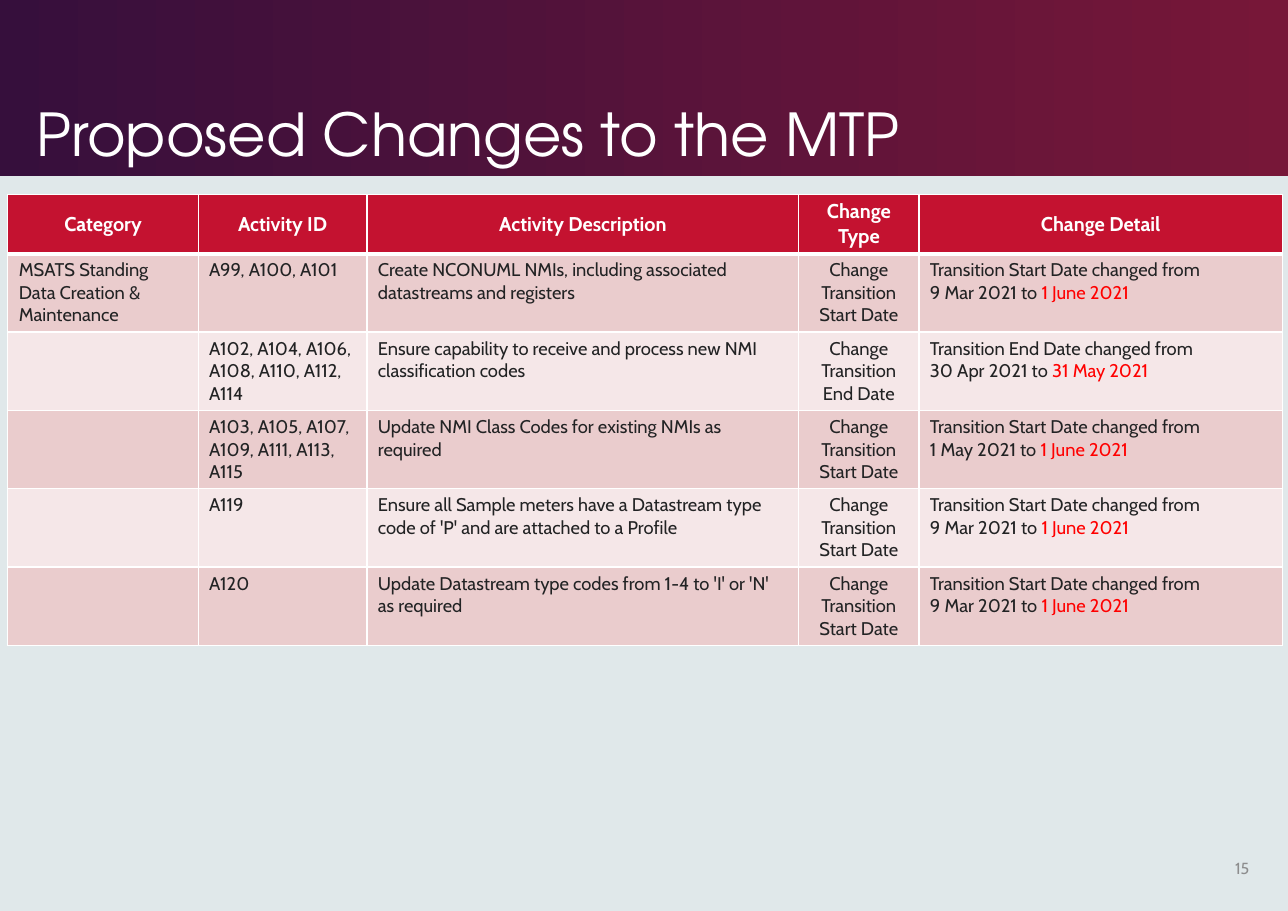
from lxml.etree import SubElement
from pptx import Presentation
from pptx.dml.color import RGBColor
from pptx.enum.shapes import MSO_SHAPE
from pptx.enum.text import MSO_ANCHOR, MSO_AUTO_SIZE, PP_ALIGN
from pptx.oxml import parse_xml
from pptx.oxml.ns import nsdecls, qn
from pptx.util import Cm, Pt

TITLE = "Proposed Changes to the MTP"
PAGE_NUMBER = "15"
HEADERS = ["Category", "Activity ID", "Activity Description", "Change Type", "Change Detail"]
START_CHANGE = ["Change Transition Start Date"]
END_CHANGE = ["Change", "Transition End Date"]
ACTIVITIES = [
    ("MSATS Standing Data Creation & Maintenance", "A99, A100, A101",
     "Create NCONUML NMIs, including associated datastreams and registers",
     START_CHANGE, ("Start", "9 Mar 2021", "1 June 2021")),
    ("", "A102, A104, A106, A108, A110, A112, A114",
     "Ensure capability to receive and process new NMI classification codes",
     END_CHANGE, ("End", "30 Apr 2021", "31 May 2021")),
    ("", "A103, A105, A107, A109, A111, A113, A115",
     "Update NMI Class Codes for existing NMIs as required",
     START_CHANGE, ("Start", "1 May 2021", "1 June 2021")),
    ("", "A119",
     "Ensure all Sample meters have a Datastream type code of 'P' and are attached to a Profile",
     START_CHANGE, ("Start", "9 Mar 2021", "1 June 2021")),
    ("", "A120",
     "Update Datastream type codes from 1-4 to 'I' or 'N' as required",
     START_CHANGE, ("Start", "9 Mar 2021", "1 June 2021")),
]
COLUMN_WIDTHS = [4.39, 3.89, 9.96, 2.77, 8.38]
HEADER_HEIGHT, ROW_HEIGHT = 1.36, 1.8
SLIDE_WIDTH, SLIDE_HEIGHT = 29.7, 21
BODY_FONT, TITLE_FONT = "Cabin", "TeX Gyre Adventor"
WHITE, DARK, RED, GREY = "FFFFFF", "222324", "FF0000", "8D8D8E"
HEADER_FILL, ROW_FILLS = "C41230", ["EACCCD", "F5E7E8"]


def color(value):
    return RGBColor.from_string(value)


def add_text(paragraph, text, size, text_color, font_name=BODY_FONT, bold=False):
    run = paragraph.add_run()
    run.text = text
    run.font.name = font_name
    run.font.size = Pt(size)
    run.font.bold = bold
    run.font.color.rgb = color(text_color)


def format_cell(cell, fill, top=1, bottom=1):
    cell.fill.solid()
    cell.fill.fore_color.rgb = color(fill)
    properties = cell._tc.get_or_add_tcPr()
    for index, (side, width) in enumerate([("L", 1), ("R", 1), ("T", top), ("B", bottom)]):
        line = parse_xml(f'<a:ln{side} {nsdecls("a")} w="{Pt(width)}"/>')
        solid = SubElement(line, qn("a:solidFill"))
        SubElement(solid, qn("a:srgbClr"), val=WHITE)
        properties.insert(index, line)


def add_title(slide):
    title = slide.shapes.title
    title.left, title.top, title.width, title.height = Cm(0.58), Cm(0.41), Cm(22.5), Cm(3.63)
    frame = title.text_frame
    frame.auto_size = MSO_AUTO_SIZE.NONE
    frame.vertical_anchor = MSO_ANCHOR.BOTTOM
    paragraph = frame.paragraphs[0]
    paragraph.alignment = PP_ALIGN.LEFT
    paragraph.line_spacing = 0.9
    add_text(paragraph, TITLE, 38.6, WHITE, TITLE_FONT)

    band = slide.shapes.add_shape(MSO_SHAPE.RECTANGLE, 0, 0, Cm(SLIDE_WIDTH), Cm(4.06))
    band.shadow.inherit = False
    band.line.fill.background()
    band.fill.gradient()
    band.fill.gradient_angle = 0
    for stop, stop_color in zip(band.fill.gradient_stops, ["360F3C", "771738"]):
        stop.color.rgb = color(stop_color)
    title.element.addprevious(band.element)


def add_activity_table(slide):
    height = HEADER_HEIGHT + ROW_HEIGHT * len(ACTIVITIES)
    table = slide.shapes.add_table(
        len(ACTIVITIES) + 1, len(HEADERS), Cm(0.18), Cm(4.48),
        Cm(sum(COLUMN_WIDTHS)), Cm(height)).table
    for column, width in zip(table.columns, COLUMN_WIDTHS):
        column.width = Cm(width)
    for index, row in enumerate(table.rows):
        row.height = Cm(ROW_HEIGHT if index else HEADER_HEIGHT)

    for cell, header in zip(table.rows[0].cells, HEADERS):
        format_cell(cell, HEADER_FILL, bottom=3)
        cell.vertical_anchor = MSO_ANCHOR.MIDDLE
        paragraph = cell.text_frame.paragraphs[0]
        paragraph.alignment = PP_ALIGN.CENTER
        add_text(paragraph, header, 13, WHITE, bold=True)

    for index, activity in enumerate(ACTIVITIES):
        cells = table.rows[index + 1].cells
        for cell in cells:
            format_cell(cell, ROW_FILLS[index % 2], top=1 if index else 3)
        *texts, change_lines, (event, old_date, new_date) = activity
        for cell, text in zip(cells, texts):
            if text:
                add_text(cell.text_frame.paragraphs[0], text, 12, DARK)
        change_frame = cells[3].text_frame
        for number, line in enumerate(change_lines):
            paragraph = change_frame.add_paragraph() if number else change_frame.paragraphs[0]
            paragraph.alignment = PP_ALIGN.CENTER
            add_text(paragraph, line, 12, DARK)
        detail = cells[4].text_frame.paragraphs[0]
        unbroken_date = old_date.replace(" ", chr(160))
        add_text(detail, f"Transition {event} Date changed from {unbroken_date} to ", 12, DARK)
        add_text(detail, new_date, 12, RED)


def add_page_number(slide):
    box = slide.shapes.add_textbox(Cm(27.66), Cm(19.46), Cm(1.4), Cm(1.12))
    box.text_frame.word_wrap = True
    box.text_frame.vertical_anchor = MSO_ANCHOR.MIDDLE
    paragraph = box.text_frame.paragraphs[0]
    paragraph.alignment = PP_ALIGN.RIGHT
    add_text(paragraph, PAGE_NUMBER, 10.5, GREY)


def main():
    presentation = Presentation()
    presentation.slide_width = Cm(SLIDE_WIDTH)
    presentation.slide_height = Cm(SLIDE_HEIGHT)
    slide = presentation.slides.add_slide(presentation.slide_layouts[5])
    slide.background.fill.solid()
    slide.background.fill.fore_color.rgb = color("E0E8EA")
    add_title(slide)
    add_activity_table(slide)
    add_page_number(slide)
    presentation.save("out.pptx")


if __name__ == "__main__":
    main()
